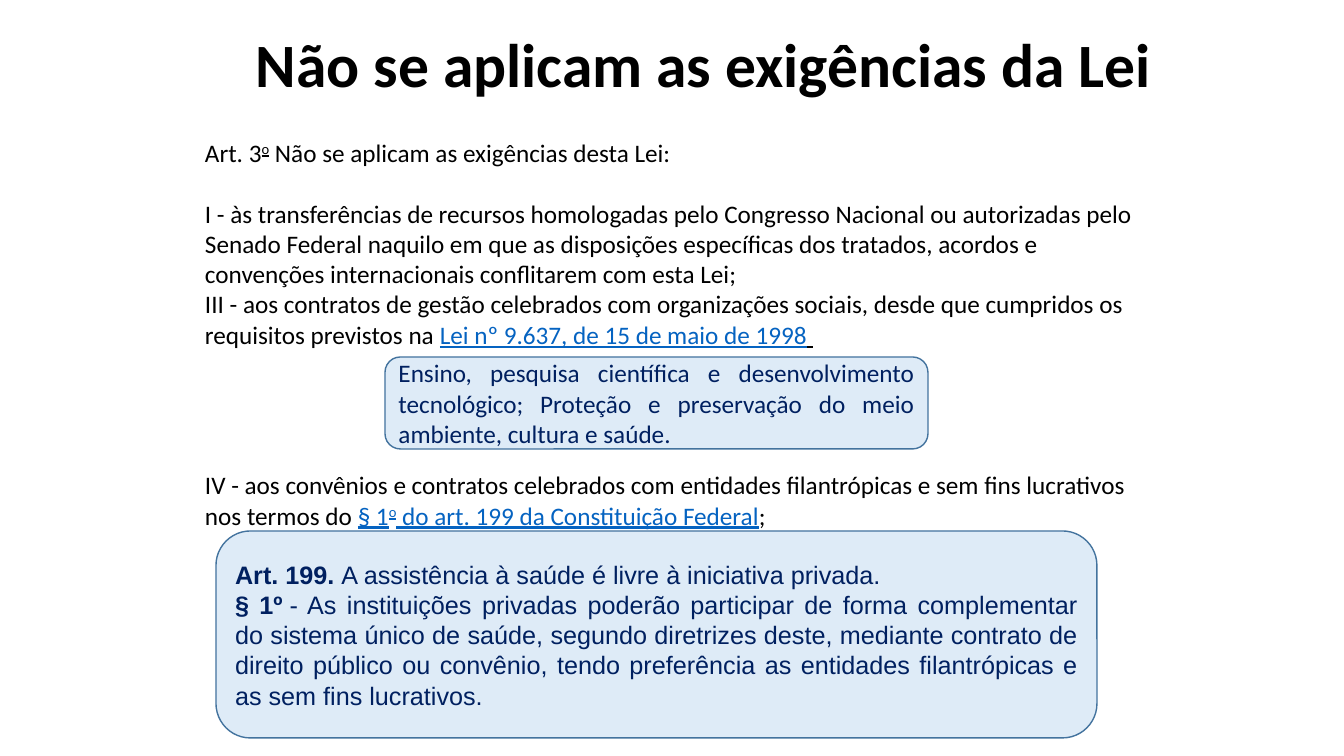
from pptx import Presentation
from pptx import util as u
from pptx.dml.color import RGBColor
from pptx.enum import shapes, text

BLACK = RGBColor(0x00, 0x00, 0x00)
NAVY = RGBColor(0x00, 0x20, 0x60)
REFERENCE_BLUE = RGBColor(0x05, 0x63, 0xC1)
PALE_BLUE = RGBColor(0xDE, 0xEB, 0xF7)
OUTLINE_BLUE = RGBColor(0x43, 0x73, 0x9E)

PX = 914400 / 100.8
SLIDE_SIZE = (1344, 756)
INSETS = (9, 5, 9, 5)

BOLD = {"bold": True}
UNDERLINED = {"underline": True}
ORDINAL = {"underline": True, "raised": True}
REFERENCE = {"underline": True, "color": REFERENCE_BLUE}
REFERENCE_ORDINAL = {**REFERENCE, "raised": True}

TITLE = [(0, [("Não se aplicam as exigências da Lei", BOLD)])]

ARTICLE_3 = [
    (0, [("Art. 3", {}), ("o", ORDINAL),
         ("\u00a0Não se aplicam as exigências desta Lei:", {})]),
    (22, [("I - às transferências de recursos homologadas pelo Congresso Nacional "
           "ou autorizadas pelo Senado Federal naquilo em que as disposições "
           "específicas dos tratados, acordos e convenções internacionais "
           "conflitarem com esta Lei;", {})]),
    (0, [("III - aos contratos de gestão celebrados com organizações sociais, "
          "desde que cumpridos os requisitos previstos na\u00a0", {}),
         ("Lei nº 9.637, de 15 de maio de 1998", REFERENCE), (" ", UNDERLINED)]),
    (86, [("IV - aos convênios e contratos celebrados com entidades filantrópicas "
           "e sem fins lucrativos nos termos do\u00a0", {}),
          ("§ 1", REFERENCE), ("o", REFERENCE_ORDINAL),
          ("\u00a0do art. 199 da Constituição Federal", REFERENCE), (";", {})]),
]

ARTICLE_199 = [
    (0, [("Art. 199.", BOLD),
         ("\u00a0A assistência à saúde é livre à iniciativa privada.", {})]),
    (0, [("§ 1º", BOLD),
         ("\u00a0- As instituições privadas poderão participar de forma complementar "
          "do sistema único de saúde, segundo diretrizes deste, mediante contrato "
          "de direito público ou convênio, tendo preferência as entidades "
          "filantrópicas e as sem fins lucrativos.", {})]),
]

SOCIAL_AREAS = [
    (0, [("Ensino, pesquisa científica e desenvolvimento tecnológico; Proteção e "
          "preservação do meio ambiente, cultura e saúde.", {})]),
]

CALLOUTS = [
    ((216, 531, 881, 207), ARTICLE_199, "Arial"),
    ((385, 357, 543, 92), SOCIAL_AREAS, "Calibri"),
]


def px(lengths):
    return [u.Emu(round(length * PX)) for length in lengths]


def write(frame, passage, font, size, color, align, anchor, line_spacing=None):
    frame.word_wrap = True
    frame.vertical_anchor = anchor
    (frame.margin_left, frame.margin_top,
     frame.margin_right, frame.margin_bottom) = px(INSETS)
    for index, (gap, pieces) in enumerate(passage):
        paragraph = frame.paragraphs[0] if index == 0 else frame.add_paragraph()
        paragraph.alignment = align
        if gap:
            paragraph.space_before = u.Pt(gap)
        if line_spacing:
            paragraph.line_spacing = line_spacing
        for words, style in pieces:
            run = paragraph.add_run()
            run.text = words
            run.font.name = font
            run.font.size = u.Pt(size)
            run.font.bold = style.get("bold", False)
            run.font.underline = style.get("underline", False)
            run.font.color.rgb = style.get("color", color)
            if style.get("raised"):
                run._r.get_or_add_rPr().set("baseline", "30000")


def main():
    deck = Presentation()
    deck.slide_width, deck.slide_height = px(SLIDE_SIZE)
    slide = deck.slides.add_slide(deck.slide_layouts[6])
    left, top, middle = text.PP_ALIGN.LEFT, text.MSO_ANCHOR.TOP, text.MSO_ANCHOR.MIDDLE

    title = slide.shapes.add_textbox(*px((247, 25, 953, 86)))
    write(title.text_frame, TITLE, "Calibri", 44, BLACK, left, middle, 0.9)

    article = slide.shapes.add_textbox(*px((196, 132, 961, 407)))
    write(article.text_frame, ARTICLE_3, "Calibri", 18, BLACK, left, top)

    for place, passage, font in CALLOUTS:
        callout = slide.shapes.add_shape(shapes.MSO_SHAPE.ROUNDED_RECTANGLE, *px(place))
        callout.shadow.inherit = False
        callout.fill.solid()
        callout.fill.fore_color.rgb = PALE_BLUE
        callout.line.color.rgb = OUTLINE_BLUE
        callout.line.width = u.Pt(1)
        write(callout.text_frame, passage, font, 18, NAVY, text.PP_ALIGN.JUSTIFY, middle)

    deck.save("out.pptx")


if __name__ == "__main__":
    main()
